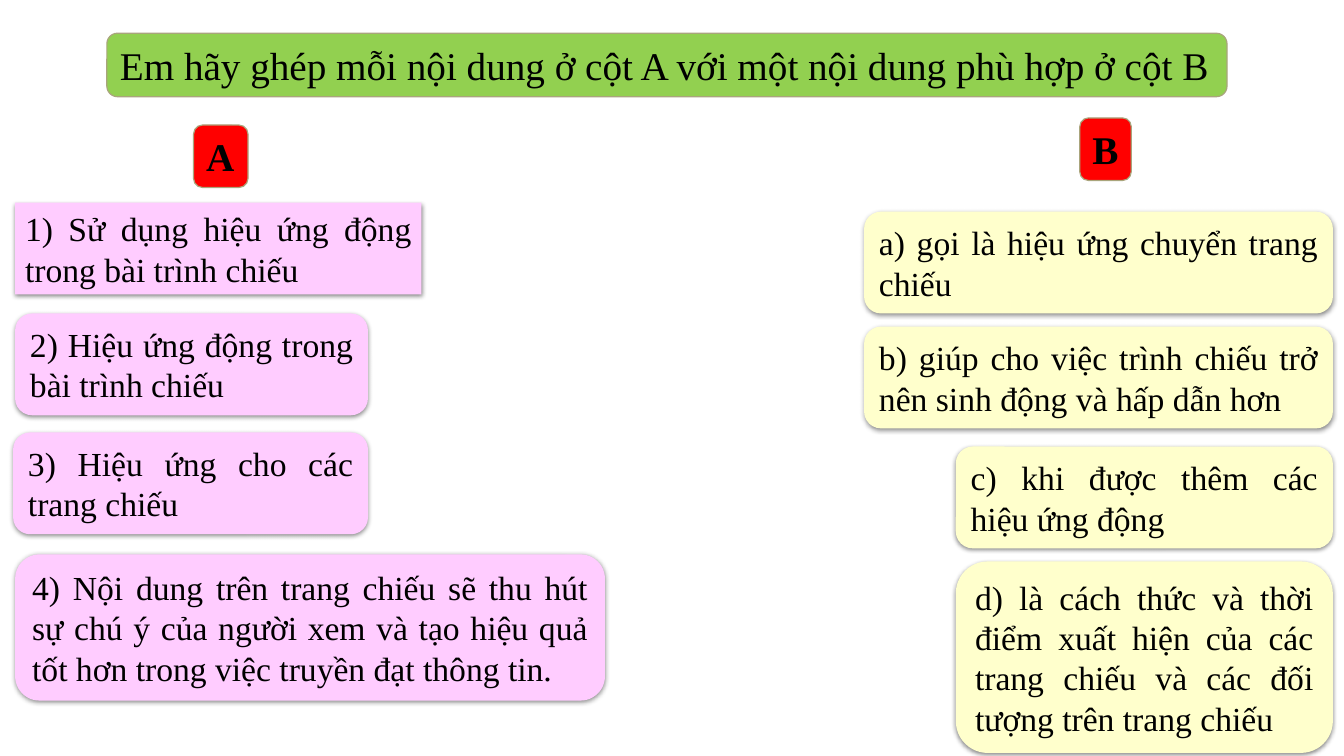
import pptx
import pptx.util
import pptx.dml.color
import pptx.enum.shapes
import pptx.enum.text
import pptx.oxml
import pptx.oxml.ns

COLORS = {"pink": "FFCCFF", "cream": "FFFFCC", "green": "92D050", "red": "FF0000",
          "outline": "A9A57C", "text": "000000", "shadow": "000000"}
SLIDE_WIDTH, SLIDE_HEIGHT = 13.33, 7.5
LEFT_EDGE = 0.15
RIGHT_EDGE = SLIDE_WIDTH - 0.11
TWO_LINES = 1.01
RECT = pptx.enum.shapes.MSO_SHAPE.RECTANGLE
ROUNDED = pptx.enum.shapes.MSO_SHAPE.ROUNDED_RECTANGLE
JUSTIFY = pptx.enum.text.PP_ALIGN.JUSTIFY
LEFT = pptx.enum.text.PP_ALIGN.LEFT

deck = pptx.Presentation()
deck.slide_width = pptx.util.Inches(SLIDE_WIDTH)
deck.slide_height = pptx.util.Inches(SLIDE_HEIGHT)
page = deck.slides.add_slide(deck.slide_layouts[6])


def add_box(kind, left, top, width, height, fill, text, size, align=JUSTIFY, bold=False):
    box = page.shapes.add_shape(kind, *map(pptx.util.Inches, (left, top, width, height)))
    box.shadow.inherit = False
    box.fill.solid()
    box.fill.fore_color.rgb = pptx.dml.color.RGBColor.from_string(COLORS[fill])
    frame = box.text_frame
    frame.auto_size = pptx.enum.text.MSO_AUTO_SIZE.SHAPE_TO_FIT_TEXT
    frame.vertical_anchor = pptx.enum.text.MSO_ANCHOR.MIDDLE
    para = frame.paragraphs[0]
    para.alignment = align
    span = para.add_run()
    span.text = text
    span.font.name = "Times New Roman"
    span.font.size = pptx.util.Pt(size)
    span.font.bold = bold
    span.font.color.rgb = pptx.dml.color.RGBColor.from_string(COLORS["text"])
    return box


def add_soft_shadow(box):
    effects = box._element.spPr.find(pptx.oxml.ns.qn("a:effectLst"))
    effects.append(pptx.oxml.parse_xml(
        f'<a:outerShdw {pptx.oxml.ns.nsdecls("a")} blurRad="{pptx.util.Pt(3.5)}" '
        f'dist="{pptx.util.Pt(1.1)}" dir="5400000" rotWithShape="0">'
        f'<a:srgbClr val="{COLORS["shadow"]}"><a:alpha val="45000"/></a:srgbClr>'
        '</a:outerShdw>'))


# Column A starts at the left edge: shape, left, top, width, height, text
column_a = [
    (RECT, LEFT_EDGE, 2.01, 4.03, 0.91, "1) Sử dụng hiệu ứng động trong bài trình chiếu"),
    (ROUNDED, LEFT_EDGE, 3.11, 3.5, TWO_LINES, "2) Hiệu ứng động trong bài trình chiếu"),
    (ROUNDED, LEFT_EDGE - 0.02, 4.29, 3.52, TWO_LINES, "3) Hiệu ứng cho các trang chiếu"),
    (ROUNDED, LEFT_EDGE, 5.5, 5.85, 1.45,
     "4) Nội dung trên trang chiếu sẽ thu hút sự chú ý của người xem "
     "và tạo hiệu quả tốt hơn trong việc truyền đạt thông tin."),
]
# Column B ends at the right edge: top, width, height, text
column_b = [
    (2.1, 4.65, TWO_LINES, "a) gọi là hiệu ứng chuyển trang chiếu"),
    (3.24, 4.65, TWO_LINES, "b) giúp cho việc trình chiếu trở nên sinh động và hấp dẫn hơn"),
    (4.43, 3.74, TWO_LINES, "c) khi được thêm các hiệu ứng động"),
    (5.57, 3.74, 1.9,
     "d) là cách thức và thời điểm xuất hiện của các trang chiếu "
     "và các đối tượng trên trang chiếu"),
]
cards = [(*card[:5], "pink", card[5]) for card in column_a]
cards += [(ROUNDED, RIGHT_EDGE - width, top, width, height, "cream", text)
          for top, width, height, text in column_b]
for card in cards:
    box = add_box(*card, size=24)
    box.text_frame.word_wrap = True
    box.line.fill.background()
    add_soft_shadow(box)

# Title and column headings: left, top, width, height, fill, text, alignment, bold
headings = [
    (1.06, 0.33, 11.11, 0.63, "green",
     "Em hãy ghép mỗi nội dung ở cột A với một nội dung phù hợp ở cột B", LEFT, False),
    (1.92, 1.24, 0.54, 0.62, "red", "A", JUSTIFY, True),
    (10.71, 1.17, 0.51, 0.62, "red", "B", JUSTIFY, True),
]
for left, top, width, height, fill, text, align, bold in headings:
    box = add_box(ROUNDED, left, top, width, height, fill, text, 28, align, bold)
    box.text_frame.word_wrap = False
    box.line.color.rgb = pptx.dml.color.RGBColor.from_string(COLORS["outline"])
    box.line.width = pptx.util.Pt(0.85)

deck.save("out.pptx")
